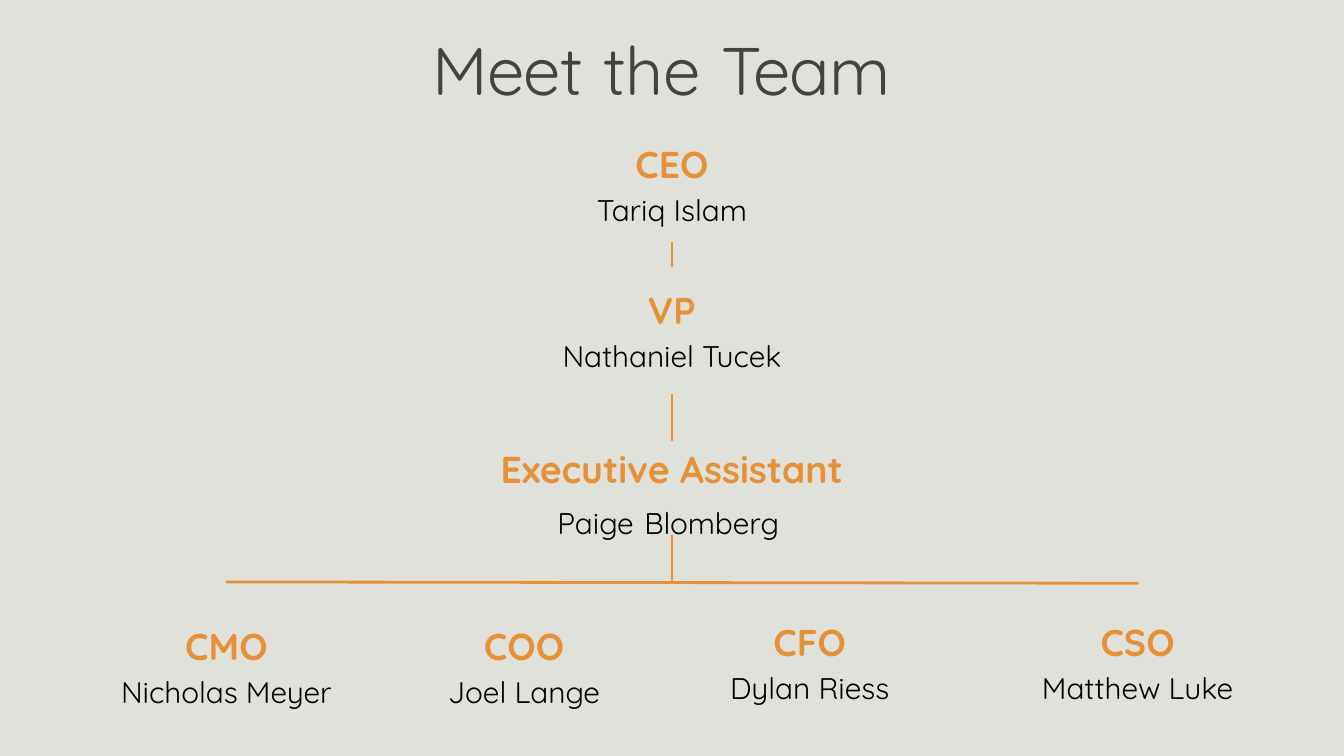
from lxml.etree import SubElement
from pptx import Presentation
from pptx.dml.color import RGBColor
from pptx.enum.shapes import MSO_CONNECTOR
from pptx.enum.text import MSO_ANCHOR, PP_ALIGN
from pptx.oxml.ns import qn
from pptx.util import Inches, Pt

BACKGROUND = RGBColor(0xE1, 0xE1, 0xDB)
TITLE_GREY = RGBColor(0x43, 0x43, 0x43)
ORANGE = RGBColor(0xE6, 0x91, 0x38)
BLACK = RGBColor(0x00, 0x00, 0x00)
FONT = "Quicksand"


def add_run(paragraph, text, size=16, color=BLACK, bold=False, font=FONT, spacing=None):
    run = paragraph.add_run()
    run.text = text
    run.font.name = font
    run.font.size = Pt(size)
    run.font.bold = bold
    run.font.color.rgb = color
    if spacing is not None:
        run.font._element.set("spc", str(round(spacing * 100)))


class TeamSlide:
    """Holds the style and the current slide."""

    def __init__(self, presentation):
        self.slide = presentation.slides.add_slide(presentation.slide_layouts[6])
        fill = self.slide.background.fill
        fill.solid()
        fill.fore_color.rgb = BACKGROUND

    def text_box(self, left, top, width, height, paragraphs, line_spacing=1.15, inset=0.1):
        """Each paragraph is a list of (text, format) pairs."""
        shape = self.slide.shapes.add_textbox(
            Inches(left), Inches(top), Inches(width), Inches(height))
        frame = shape.text_frame
        frame.word_wrap = True
        frame.vertical_anchor = MSO_ANCHOR.TOP
        frame.margin_left = frame.margin_right = Inches(0.1)
        frame.margin_top = frame.margin_bottom = Inches(inset)
        for index, runs in enumerate(paragraphs):
            paragraph = frame.add_paragraph() if index else frame.paragraphs[0]
            paragraph.alignment = PP_ALIGN.CENTER
            paragraph.line_spacing = line_spacing
            for text, style in runs:
                add_run(paragraph, text, **style)
        return shape

    def title(self, text):
        style = {"color": TITLE_GREY, "spacing": -0.4}
        runs = []
        for word in text.split():
            runs += [(word, {"size": 36, **style}), (" ", {"size": 40.5, **style})]
        return self.text_box(0.34, 0.15, 9.32, 0.63, [runs], line_spacing=0.85)

    def member(self, role, name_runs, left, top, width, height, inset=0.1):
        role_runs = [(role, {"size": 20, "color": ORANGE, "bold": True})]
        return self.text_box(left, top, width, height, [role_runs, name_runs], inset=inset)

    def line(self, x1, y1, x2, y2):
        connector = self.slide.shapes.add_connector(
            MSO_CONNECTOR.STRAIGHT, Inches(x1), Inches(y1), Inches(x2), Inches(y2))
        connector.line.color.rgb = ORANGE
        connector.line.width = Pt(1.5)
        SubElement(connector._element.spPr, qn("a:effectLst"))
        return connector


def main():
    # Widescreen slide, 16:9
    presentation = Presentation()
    presentation.slide_width = Inches(10)
    presentation.slide_height = Inches(10) * 9 // 16
    team = TeamSlide(presentation)
    team.title("Meet the Team")

    # Leaders and department heads
    members = [
        ("CEO", "Tariq Islam", 4.11, 0.9, 1.78, 0.9),
        ("VP", "Nathaniel Tucek", 3.9, 1.99, 2.2, 0.84),
        ("CSO", "Matthew Luke", 7.33, 4.46, 2.27, 0.84),
        ("COO", "Joel Lange", 2.8, 4.49, 2.2, 0.63),
        ("CFO", "Dylan Riess", 5, 4.46, 2.05, 0.84),
        ("CMO", "Nicholas Meyer", 0.71, 4.49, 1.95, 0.56),
    ]
    boxes = {role: team.member(role, [(name, {})], *place)
             for role, name, *place in members}

    # Lines between the levels
    ceo_to_vp = team.line(5, 1.8, 5, 1.99)
    ceo_to_vp.begin_connect(boxes["CEO"], 2)
    ceo_to_vp.end_connect(boxes["VP"], 0)
    team.line(5, 2.93, 5, 3.28)
    team.line(1.68, 4.33, 8.47, 4.34)

    # Executive assistant, with the stem down to the department heads
    assistant_name = [
        ("Paige", {}),
        (" ", {"size": 20, "color": ORANGE, "bold": True}),
        ("Blomberg", {}),
        (" ", {"size": 18, "font": "Calibri"}),
    ]
    assistant = team.member("Executive Assistant", assistant_name,
                            3.54, 3.22, 2.92, 1.11, inset=0.05)
    stem = team.line(5, 3.98, 5, 4.33)
    stem.end_connect(assistant, 2)

    presentation.save("out.pptx")


if __name__ == "__main__":
    main()
